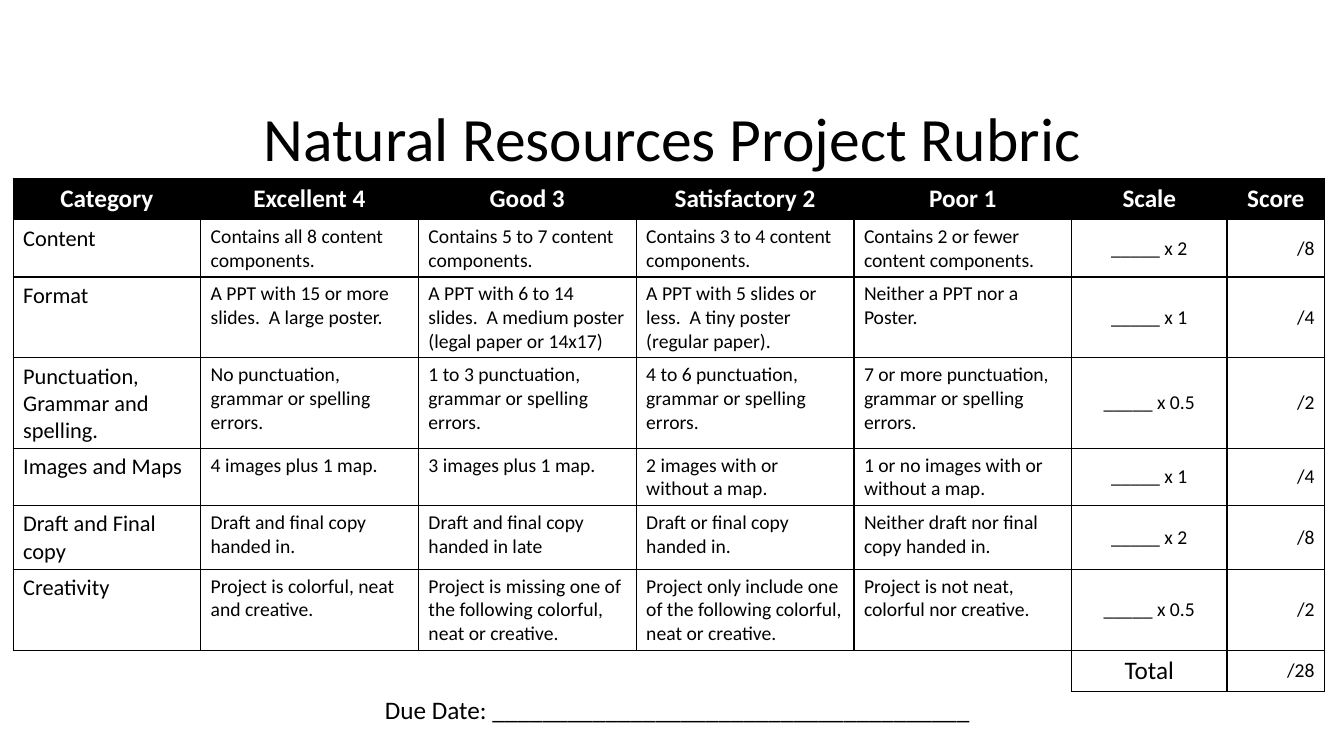
import dataclasses

import pptx
import pptx.dml.color
import pptx.enum.text
import pptx.oxml
import pptx.oxml.ns
import pptx.util

Inches = pptx.util.Inches
Pt = pptx.util.Pt
ALIGN = pptx.enum.text.PP_ALIGN
ANCHOR = pptx.enum.text.MSO_ANCHOR
AUTO_SIZE = pptx.enum.text.MSO_AUTO_SIZE


@dataclasses.dataclass(frozen=True)
class Theme:
    font: str = "Calibri"
    ink: str = "000000"
    paper: str = "FFFFFF"
    title: int = 44
    heading: int = 18
    category: int = 16
    body: int = 14
    border: int = 1


TITLE = "Natural Resources Project Rubric"
DUE_DATE = "Due Date: " + "_" * 38
HEADINGS = ["Category", "Excellent 4", "Good 3", "Satisfactory 2", "Poor 1", "Scale", "Score"]
CRITERIA = [
    ["Content", "Contains all 8 content components.", "Contains 5 to 7 content components.",
     "Contains 3 to 4 content components.", "Contains 2 or fewer content components.",
     "_____ x 2", "/8"],
    ["Format", "A PPT with 15 or more slides.  A large poster.",
     "A PPT with 6 to 14 slides.  A medium poster (legal paper or 14x17)",
     "A PPT with 5 slides or less.  A tiny poster (regular paper).",
     "Neither a PPT nor a Poster.", "_____ x 1", "/4"],
    ["Punctuation, Grammar and spelling.", "No punctuation, grammar or spelling errors.",
     "1 to 3 punctuation, grammar or spelling errors.",
     "4 to 6 punctuation, grammar or spelling errors.",
     "7 or more punctuation, grammar or spelling errors.", "_____ x 0.5", "/2"],
    ["Images and Maps", "4 images plus 1 map.", "3 images plus 1 map.",
     "2 images with or without a map.", "1 or no images with or without a map.",
     "_____ x 1", "/4"],
    ["Draft and Final copy", "Draft and final copy handed in.",
     "Draft and final copy handed in late", "Draft or final copy handed in.",
     "Neither draft nor final copy handed in.", "_____ x 2", "/8"],
    ["Creativity", "Project is colorful, neat and creative.",
     "Project is missing one of the following colorful, neat or creative.",
     "Project only include one of the following colorful, neat or creative.",
     "Project is not neat, colorful nor creative.", "_____ x 0.5", "/2"],
]
TOTAL = [""] * 5 + ["Total", "/28"]
COLUMN_WIDTHS = [1.86, 2.16, 2.16, 2.16, 2.16, 1.54, 0.97]
ROW_HEIGHT = 0.41
SCALE, SCORE = 5, 6


def set_attributes(obj, values):
    for name, value in values.items():
        setattr(obj, name, value)


class RubricSlide:
    def __init__(self, prs, theme):
        self.theme = theme
        self.slide = prs.slides.add_slide(prs.slide_layouts[6])

    def add_text(self, tf, text, size, color=None, bold=False, **paragraph):
        p = tf.paragraphs[0]
        set_attributes(p, paragraph)
        r = p.add_run()
        r.text = text
        set_attributes(r.font, {"name": self.theme.font, "size": Pt(size), "bold": bold})
        r.font.color.rgb = pptx.dml.color.RGBColor.from_string(color or self.theme.ink)

    def text_box(self, box, text, size, frame, **paragraph):
        tf = self.slide.shapes.add_textbox(*map(Inches, box)).text_frame
        set_attributes(tf, {"word_wrap": True, **frame})
        self.add_text(tf, text, size, **paragraph)

    def borders(self, cell, sides):
        """Draw the named sides (from "LRTB") of a cell and clear the others."""
        tc_pr = cell._tc.get_or_add_tcPr()
        for side in "LRTB":
            fill = "<a:noFill/>"
            if side in sides:
                fill = f'<a:solidFill><a:srgbClr val="{self.theme.ink}"/></a:solidFill>'
            tc_pr.append(pptx.oxml.parse_xml(
                f'<a:ln{side} {pptx.oxml.ns.nsdecls("a")} w="{Pt(self.theme.border)}">'
                f"{fill}</a:ln{side}>"))

    def blank_cell(self, cell, column):
        self.borders(cell, "TR" if column in (0, SCALE - 1) else "T")
        cell.fill.background()

    def cell(self, cell, text, column, is_header, is_total):
        t = self.theme
        self.borders(cell, "LRTB")
        cell.fill.solid()
        cell.fill.fore_color.rgb = pptx.dml.color.RGBColor.from_string(
            t.ink if is_header else t.paper)
        if is_header or (is_total and column == SCALE):
            size = t.heading
        else:
            size = t.category if column == 0 else t.body
        align = ALIGN.LEFT
        if is_header or column == SCALE:
            align = ALIGN.CENTER
        elif column == SCORE:
            align = ALIGN.RIGHT
        centred = is_header or column >= SCALE
        cell.vertical_anchor = ANCHOR.MIDDLE if centred else ANCHOR.TOP
        self.add_text(cell.text_frame, text, size, t.paper if is_header else t.ink,
                      is_header, alignment=align)

    def table(self, box, rows):
        frame = self.slide.shapes.add_table(len(rows), len(rows[0]), *map(Inches, box))
        table = frame.table
        set_attributes(table, {"first_row": False, "horz_banding": False})
        for column, width in zip(table.columns, COLUMN_WIDTHS):
            column.width = Inches(width)
        for row in table.rows:
            row.height = Inches(ROW_HEIGHT)
        frame.height = Inches(box[3])
        last = len(rows) - 1
        for i, texts in enumerate(rows):
            for j, text in enumerate(texts):
                if text:
                    self.cell(table.cell(i, j), text, j, i == 0, i == last)
                else:
                    self.blank_cell(table.cell(i, j), j)
        table.cell(last, 0).merge(table.cell(last, SCALE - 1))


def main():
    prs = pptx.Presentation()
    set_attributes(prs, {"slide_width": Inches(13.33), "slide_height": Inches(7.5)})
    theme = Theme()
    s = RubricSlide(prs, theme)
    s.text_box((0.92, 0.68, 11.5, 1.45), TITLE, theme.title,
               {"vertical_anchor": ANCHOR.MIDDLE}, alignment=ALIGN.CENTER, line_spacing=0.9)
    s.table((0.13, 1.77, 13, 5.08), [HEADINGS, *CRITERIA, TOTAL])
    s.text_box((3.72, 6.84, 6.13, 0.4), DUE_DATE, theme.heading,
               {"auto_size": AUTO_SIZE.SHAPE_TO_FIT_TEXT})
    prs.save("out.pptx")


if __name__ == "__main__":
    main()
